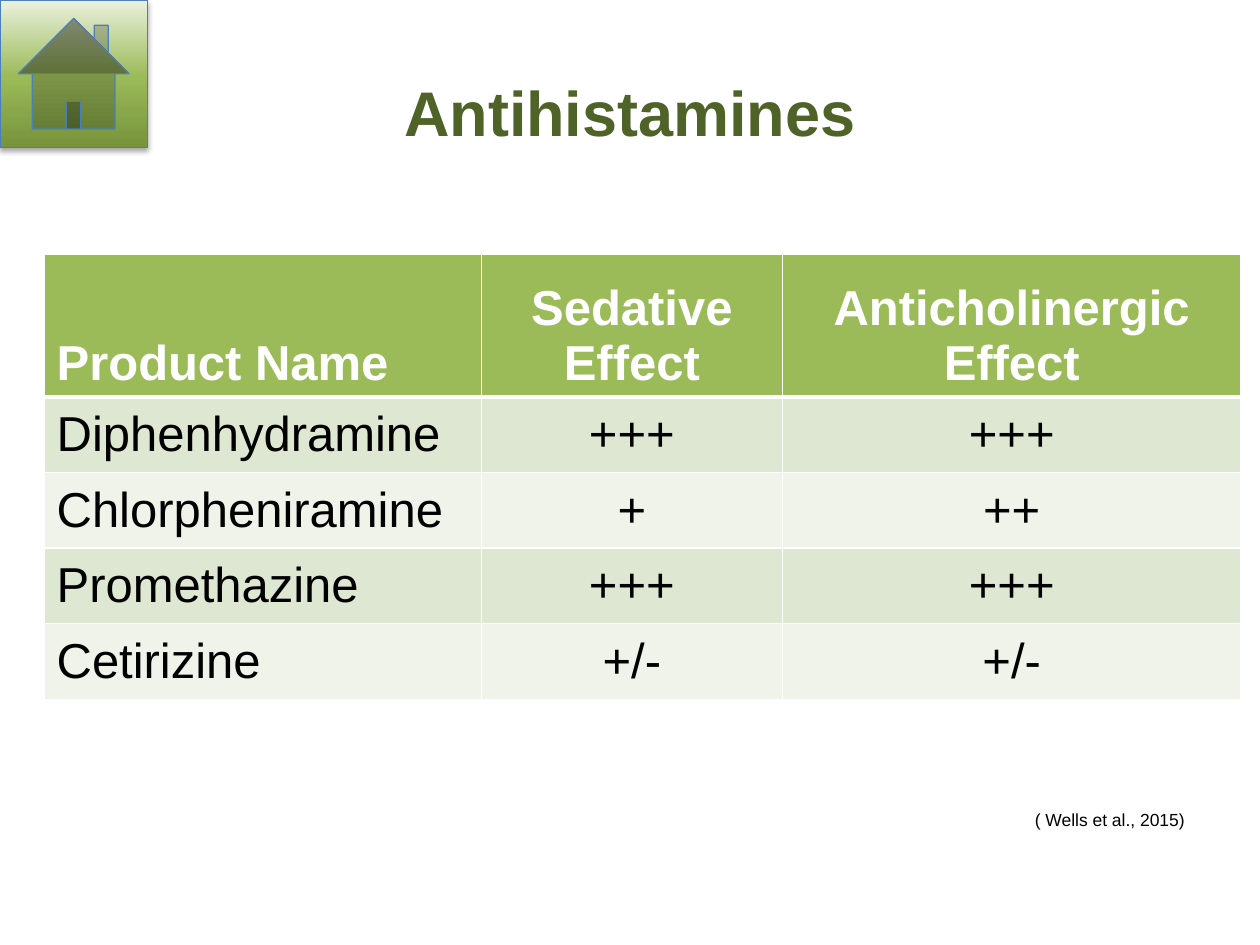
from copy import deepcopy
from typing import NamedTuple

from lxml import etree
from pptx import Presentation
from pptx.dml.color import RGBColor
from pptx.enum import shapes, text
from pptx.oxml import ns
from pptx.util import Inches, Pt

FONT = "Arial"
WHITE = RGBColor(0xFF, 0xFF, 0xFF)
BLACK = RGBColor(0, 0, 0)
TITLE_GREEN = RGBColor(0x4F, 0x62, 0x28)
HEADER_GREEN = RGBColor(0x9B, 0xBB, 0x59)
BAND_GREENS = (RGBColor(0xDE, 0xE7, 0xD1), RGBColor(0xEF, 0xF3, 0xEA))
BUTTON_GRADIENT = (
    (0, RGBColor(0x77, 0x93, 0x3C)),
    (0.48, HEADER_GREEN),
    (1, RGBColor(0xEB, 0xF1, 0xDE)),
)
BUTTON_LINE = RGBColor(0x4B, 0x7E, 0xBC)

COLUMN_WIDTHS = (3.47, 2.39, 3.64)
HEADER_HEIGHT, ROW_HEIGHT = 1.13, 0.6


class Product(NamedTuple):
    name: str
    sedative: str
    anticholinergic: str


HEADER = Product("Product Name", "Sedative Effect", "Anticholinergic Effect")
PRODUCTS = (
    Product("Diphenhydramine", "+++", "+++"),
    Product("Chlorpheniramine", "+", "++"),
    Product("Promethazine", "+++", "+++"),
    Product("Cetirizine", "+/-", "+/-"),
)


def write(frame, content: str, size: int, color: RGBColor, align, bold: bool = False) -> None:
    frame.text = content
    paragraph = frame.paragraphs[0]
    paragraph.alignment = align
    font = paragraph.runs[0].font
    font.name, font.size, font.bold = FONT, Pt(size), bold
    font.color.rgb = color


def add_element(parent, tag: str, **attributes):
    return etree.SubElement(parent, ns.qn(tag), attributes)


def set_borders(cell, top: int, bottom: int) -> None:
    """Draw white borders; the widths are in points, the sides are 1 point."""
    properties = cell._tc.get_or_add_tcPr()
    widths = {"a:lnL": 1, "a:lnR": 1, "a:lnT": top, "a:lnB": bottom}
    for position, (tag, width) in enumerate(widths.items()):
        line = add_element(properties, tag, w=str(Pt(width)))
        add_element(add_element(line, "a:solidFill"), "a:srgbClr", val=str(WHITE))
        properties.insert(position, line)


def add_title(slide) -> None:
    title = slide.shapes.title
    title.left, title.top = Inches(0.5), Inches(0.3)
    title.width, title.height = Inches(9), Inches(1.25)
    title.text_frame.vertical_anchor = text.MSO_ANCHOR.MIDDLE
    write(title.text_frame, "Antihistamines", 36, TITLE_GREEN, text.PP_ALIGN.CENTER, True)
    title.text_frame.paragraphs[0].line_spacing = 0.9


def add_product_table(slide) -> None:
    rows = (HEADER, *PRODUCTS)
    height = HEADER_HEIGHT + ROW_HEIGHT * len(PRODUCTS)
    table = slide.shapes.add_table(
        len(rows), len(COLUMN_WIDTHS), Inches(0.35), Inches(2.02),
        Inches(sum(COLUMN_WIDTHS)), Inches(height),
    ).table
    for column, width in zip(table.columns, COLUMN_WIDTHS):
        column.width = Inches(width)
    for row_index, row in enumerate(rows):
        is_header = row_index == 0
        table.rows[row_index].height = Inches(HEADER_HEIGHT if is_header else ROW_HEIGHT)
        for column_index, content in enumerate(row):
            cell = table.cell(row_index, column_index)
            cell.vertical_anchor = text.MSO_ANCHOR.BOTTOM if is_header else text.MSO_ANCHOR.MIDDLE
            align = text.PP_ALIGN.CENTER if column_index else text.PP_ALIGN.LEFT
            write(cell.text_frame, content, 28, WHITE if is_header else BLACK, align, is_header)
            cell.fill.solid()
            cell.fill.fore_color.rgb = HEADER_GREEN if is_header else BAND_GREENS[(row_index - 1) % 2]
            set_borders(cell, top=3 if row_index == 1 else 1, bottom=3 if is_header else 1)


def add_citation(slide) -> None:
    box = slide.shapes.add_textbox(Inches(6.53), Inches(6.25), Inches(2.97), Inches(0.39))
    box.text_frame.word_wrap = True
    box.text_frame.vertical_anchor = text.MSO_ANCHOR.BOTTOM
    write(box.text_frame, "( Wells et al., 2015)", 10, BLACK, text.PP_ALIGN.RIGHT)


def add_home_button(slide) -> None:
    button = slide.shapes.add_shape(
        shapes.MSO_SHAPE.ACTION_BUTTON_HOME, 0, 0, Inches(1.17), Inches(1.17)
    )
    button.fill.gradient()
    button.fill.gradient_angle = 90
    properties = button._element.spPr
    stop_list = properties.find(".//" + ns.qn("a:gsLst"))
    stop_list.append(deepcopy(stop_list[0]))
    for stop, (position, color) in zip(button.fill.gradient_stops, BUTTON_GRADIENT):
        stop.position = position
        stop.color.rgb = color
    button.line.color.rgb = BUTTON_LINE
    button.line.width = Pt(0.75)

    button.shadow.inherit = False
    effects = properties.find(ns.qn("a:effectLst"))
    shadow = add_element(
        effects, "a:outerShdw", blurRad=str(Pt(3.1)), dist=str(Pt(1.8)),
        dir="5400000", rotWithShape="0",
    )
    shadow_color = add_element(shadow, "a:srgbClr", val=str(BLACK))
    add_element(shadow_color, "a:alpha", val="35000")


def main() -> None:
    presentation = Presentation()
    presentation.slide_width, presentation.slide_height = Inches(10), Inches(7.5)
    slide = presentation.slides.add_slide(presentation.slide_layouts[5])
    add_title(slide)
    add_product_table(slide)
    add_citation(slide)
    add_home_button(slide)
    presentation.save("out.pptx")


if __name__ == "__main__":
    main()
